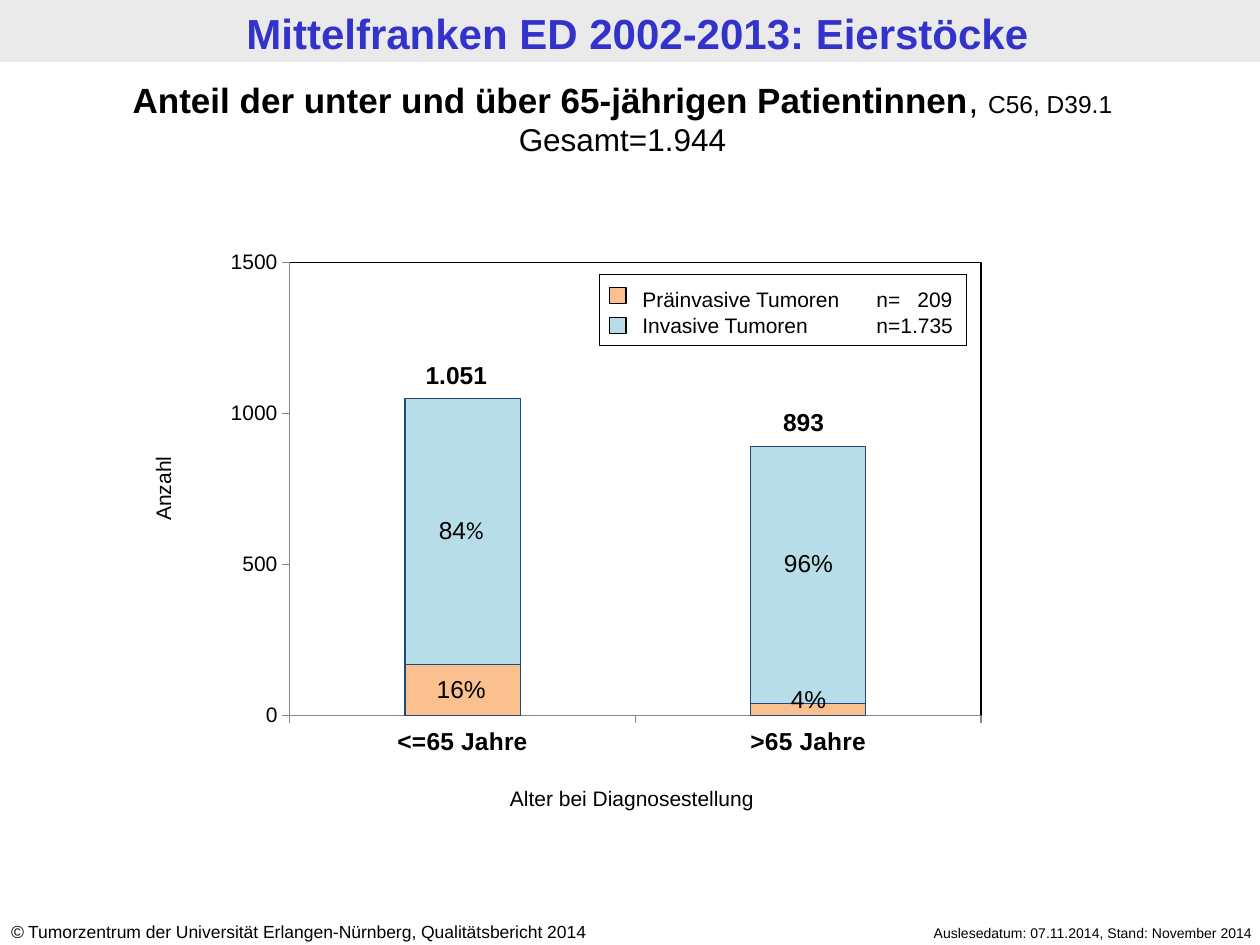
from dataclasses import dataclass
from typing import Optional

from lxml import etree
from pptx import Presentation
from pptx.chart.data import CategoryChartData
from pptx.dml.color import RGBColor
from pptx.enum.chart import XL_CHART_TYPE, XL_TICK_MARK
from pptx.enum.shapes import MSO_SHAPE
from pptx.enum.text import MSO_ANCHOR, PP_ALIGN
from pptx.oxml import parse_xml
from pptx.oxml.ns import qn
from pptx.util import Cm, Pt

LEFT, CENTER, RIGHT = PP_ALIGN.LEFT, PP_ALIGN.CENTER, PP_ALIGN.RIGHT
RECT = MSO_SHAPE.RECTANGLE
STACKED = XL_CHART_TYPE.COLUMN_STACKED
TICK_OUT, TICK_NONE = XL_TICK_MARK.OUTSIDE, XL_TICK_MARK.NONE


@dataclass(frozen=True)
class Theme:
    font: str = "Arial"
    alt_font: str = "Calibri"
    black: str = "000000"
    title: str = "3333CC"
    band: str = "EAEAEA"
    preinvasive: str = "FAC090"
    invasive: str = "B7DEE8"
    bar_line: str = "1F497D"
    axis: str = "868686"
    title_size: float = 24
    heading_size: float = 20
    total_size: float = 18
    label_size: float = 14
    small_size: float = 12
    copyright_size: float = 10
    date_size: float = 8
    line: float = 0.75


T = Theme()


@dataclass(frozen=True)
class Box:
    """Position and size in centimetres."""
    x: float
    y: float
    w: float
    h: float

    def lengths(self) -> tuple:
        return Cm(self.x), Cm(self.y), Cm(self.w), Cm(self.h)


@dataclass(frozen=True)
class Run:
    text: str
    size: float
    bold: bool = False
    italic: bool = False
    color: str = T.black
    font: str = T.font


@dataclass(frozen=True)
class Label:
    box: Box
    lines: list[list[Run]]
    align: PP_ALIGN = CENTER
    rotation: float = 0
    tabs: tuple = ()


def rgb(color: str) -> RGBColor:
    return RGBColor.from_string(color)


def style_font(font, size: float, bold: bool = False, italic: bool = False,
               color: str = T.black, name: str = T.font) -> None:
    font.size, font.bold, font.italic, font.name = Pt(size), bold, italic, name
    font.color.rgb = rgb(color)


def fill_text(tf, lines: list[list[Run]], align: PP_ALIGN, tabs: tuple = ()) -> None:
    """Write the lines; tabs holds (position in cm, alignment code) pairs."""
    tf.word_wrap = True
    for i, runs in enumerate(lines):
        p = tf.add_paragraph() if i else tf.paragraphs[0]
        p.alignment = align
        if tabs:
            tab_list = etree.SubElement(p._p.get_or_add_pPr(), qn("a:tabLst"))
            for pos, kind in tabs:
                etree.SubElement(tab_list, qn("a:tab"), pos=str(Cm(pos)), algn=kind)
        for run in runs:
            r = p.add_run()
            r.text = run.text
            style_font(r.font, run.size, run.bold, run.italic, run.color, run.font)


def add_label(s, label: Label) -> None:
    sp = s.shapes.add_textbox(*label.box.lengths())
    sp.rotation = label.rotation
    fill_text(sp.text_frame, label.lines, label.align, label.tabs)


def add_rect(s, box: Box, fill: Optional[str] = None, line: Optional[str] = None):
    sp = s.shapes.add_shape(RECT, *box.lengths())
    sp.shadow.inherit = False
    if fill:
        sp.fill.solid()
        sp.fill.fore_color.rgb = rgb(fill)
    else:
        sp.fill.background()
    if line:
        sp.line.color.rgb = rgb(line)
        sp.line.width = Pt(T.line)
    else:
        sp.line.fill.background()
    return sp


def add_title(s) -> None:
    band = add_rect(s, Box(0, 0, 25.4, 1.25), T.band)
    s.shapes.element.insert(2, band.element)  # behind the title
    sp = s.shapes.title
    sp.left, sp.top, sp.width, sp.height = Box(0.15, 0.03, 25.4, 1.25).lengths()
    sp.text_frame.vertical_anchor = MSO_ANCHOR.MIDDLE
    fill_text(sp.text_frame, [[Run("Mittelfranken ED 2002-2013: Eierstöcke",
                                   T.title_size, bold=True, color=T.title)]], CENTER)


def frame_plot(chart) -> None:
    """Fix the inner plot rectangle and outline it."""
    ns = ('xmlns:c="http://schemas.openxmlformats.org/drawingml/2006/chart" '
          'xmlns:a="http://schemas.openxmlformats.org/drawingml/2006/main"')
    area = chart._chartSpace.chart.plotArea
    for old in area.findall(qn("c:layout")):
        area.remove(old)
    places = "".join(f'<c:{tag} val="{val}"/>' for tag, val in (
        ("layoutTarget", "inner"), ("xMode", "edge"), ("yMode", "edge"),
        ("x", 0.113), ("y", 0.142), ("w", 0.786), ("h", 0.772)))
    area.insert(0, parse_xml(
        f"<c:layout {ns}><c:manualLayout>{places}</c:manualLayout></c:layout>"))
    area.append(parse_xml(
        f'<c:spPr {ns}><a:noFill/><a:ln w="{Pt(T.line)}"><a:solidFill>'
        f'<a:srgbClr val="{T.black}"/></a:solidFill></a:ln></c:spPr>'))


def add_age_chart(s) -> None:
    data = CategoryChartData()
    data.categories = ["<=65 Jahre", ">65 Jahre"]
    data.add_series("Series 1", (170, 40))
    data.add_series("Series 2", (880, 850))
    box = Box(3.84, 3.61, 17.73, 11.84)
    chart = s.shapes.add_chart(STACKED, *box.lengths(), data).chart
    chart.has_legend = chart.has_title = False
    style_font(chart.font, T.total_size, name=T.alt_font)
    plot = chart.plots[0]
    plot.gap_width, plot.overlap, plot.vary_by_categories = 200, 100, False
    for series, color in zip(plot.series, (T.preinvasive, T.invasive)):
        series.format.fill.solid()
        series.format.fill.fore_color.rgb = rgb(color)
        series.format.line.color.rgb = rgb(T.bar_line)
        series.format.line.width = Pt(T.line)
    values = chart.value_axis
    values.minimum_scale, values.maximum_scale, values.major_unit = 0, 1500, 500
    for axis, size, bold in ((chart.category_axis, T.label_size, True),
                             (values, T.small_size, False)):
        axis.has_major_gridlines = False
        axis.major_tick_mark, axis.minor_tick_mark = TICK_OUT, TICK_NONE
        axis.format.line.color.rgb = rgb(T.axis)
        style_font(axis.tick_labels.font, size, bold)
    frame_plot(chart)


def add_legend(s) -> None:
    add_rect(s, Box(12.09, 5.54, 7.39, 1.42), line=T.black)
    for y, color in ((5.79, T.preinvasive), (6.4, T.invasive)):
        add_rect(s, Box(12.29, y, 0.33, 0.33), color, T.black)
    rows = ("Präinvasive Tumoren\tn=\t209", "Invasive Tumoren\tn=\t1.735")
    add_label(s, Label(Box(12.7, 5.66, 6.81, 1.27),
                       [[Run(row, T.small_size)] for row in rows],
                       LEFT, tabs=((4.72, "l"), (6.25, "r"))))


def bar_label(x: float, y: float, *runs: Run) -> Label:
    return Label(Box(x, y, 2.5, 0.86), [list(runs)])


def main() -> None:
    prs = Presentation()
    prs.slide_width, prs.slide_height = Cm(25.4), Cm(19.05)
    s = prs.slides.add_slide(prs.slide_layouts[5])
    add_title(s)
    add_age_chart(s)
    size = T.label_size
    labels = [
        Label(Box(16.89, 18.52, 8.61, 0.61),
              [[Run("Auslesedatum: 07.11.2014, Stand: November 2014", T.date_size)]], RIGHT),
        Label(Box(-0.03, 18.44, 13.31, 0.69),
              [[Run("©", T.copyright_size, italic=True),
                Run(" Tumorzentrum der Universität Erlangen-Nürnberg, Qualitätsbericht 2014",
                    T.copyright_size)]], LEFT),
        Label(Box(0, 1.45, 25.1, 1.88),
              [[Run("Anteil der unter und über 65-jährigen Patientinnen",
                    T.heading_size, bold=True),
                Run(", ", T.heading_size), Run("C56, D39.1", size)],
               [Run("Gesamt=1.944", T.total_size)]]),
        Label(Box(8.51, 15.72, 8.46, 0.76), [[Run("Alter bei Diagnosestellung", T.small_size)]]),
        Label(Box(-0.03, 9.47, 6.63, 0.76), [[Run("Anzahl", T.small_size)]], rotation=270),
        bar_label(7.95, 7.14, Run("1.051", size, bold=True)),
        bar_label(14.95, 8.08, Run("893", size, bold=True)),
        bar_label(8.05, 10.26, Run("84", size), Run("%", size, font=T.alt_font)),
        bar_label(15.05, 10.92, Run("96%", size)),
        bar_label(8.05, 13.46, Run("16%", size)),
        bar_label(15.05, 13.67, Run("4%", size)),
    ]
    for label in labels:
        add_label(s, label)
    add_legend(s)
    prs.save("out.pptx")


if __name__ == "__main__":
    main()
